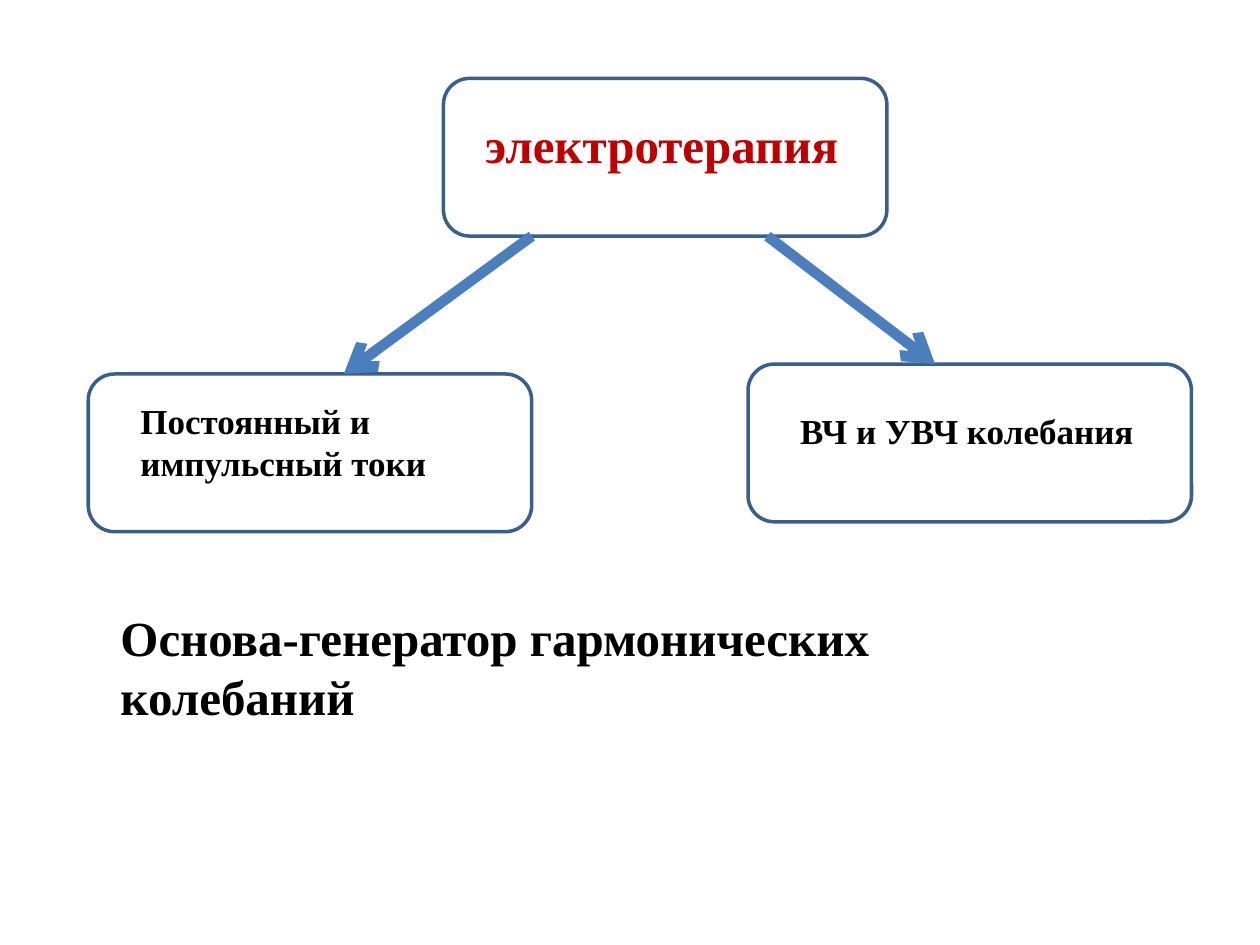
from dataclasses import dataclass

from lxml import etree
from pptx import Presentation
from pptx.dml.color import RGBColor
from pptx.enum import shapes, text
from pptx.oxml.ns import qn
from pptx.util import Cm, Pt


@dataclass(frozen=True)
class Theme:
    font: str = "Times New Roman"
    paper: RGBColor = RGBColor(0xFF, 0xFF, 0xFF)
    ink: RGBColor = RGBColor(0x00, 0x00, 0x00)
    accent: RGBColor = RGBColor(0xC0, 0x00, 0x00)
    outline: RGBColor = RGBColor(0x3A, 0x5F, 0x8C)
    arrow: RGBColor = RGBColor(0x4B, 0x7E, 0xBC)
    large: int = 28
    medium: int = 20
    outline_width: int = 2
    arrow_width: int = 6


BOX_WIDTH, BOX_HEIGHT = 8.94, 3.18


class Diagram:
    """Draws on one slide in one theme; lengths are in centimetres."""

    def __init__(self, slide, theme):
        self.slide = slide
        self.theme = theme

    def box(self, left, top):
        shape = self.slide.shapes.add_shape(
            shapes.MSO_SHAPE.ROUNDED_RECTANGLE,
            Cm(left), Cm(top), Cm(BOX_WIDTH), Cm(BOX_HEIGHT))
        shape.shadow.inherit = False
        shape.fill.solid()
        shape.fill.fore_color.rgb = self.theme.paper
        shape.line.color.rgb = self.theme.outline
        shape.line.width = Pt(self.theme.outline_width)

    def arrow(self, start, end):
        connector = self.slide.shapes.add_connector(
            shapes.MSO_CONNECTOR.STRAIGHT, *map(Cm, start + end))
        connector.line.color.rgb = self.theme.arrow
        connector.line.width = Pt(self.theme.arrow_width)
        properties = connector.element.spPr
        etree.SubElement(properties.find(qn("a:ln")), qn("a:tailEnd"), type="arrow")
        etree.SubElement(properties, qn("a:effectLst"))

    def label(self, wording, left, top, width, height, size, color=None):
        shape = self.slide.shapes.add_textbox(Cm(left), Cm(top), Cm(width), Cm(height))
        frame = shape.text_frame
        frame.text = wording
        frame.word_wrap = True
        frame.auto_size = text.MSO_AUTO_SIZE.SHAPE_TO_FIT_TEXT
        font = frame.paragraphs[0].runs[0].font
        font.name = self.theme.font
        font.size = Pt(size)
        font.bold = True
        font.color.rgb = color or self.theme.ink


def main():
    presentation = Presentation()
    presentation.slide_width, presentation.slide_height = Cm(25.4), Cm(19.05)
    slide = presentation.slides.add_slide(presentation.slide_layouts[6])
    theme = Theme()
    diagram = Diagram(slide, theme)

    root_left, root_top = 8.94, 1.58
    root_bottom = root_top + BOX_HEIGHT
    branches = [  # box left, box top, arrow start x, arrow end x
        (1.78, 7.54, 10.72, 6.93),
        (15.08, 7.34, 15.47, 18.85),
    ]

    diagram.box(root_left, root_top)
    for left, top, start_x, end_x in branches:
        diagram.box(left, top)
        diagram.arrow((start_x, root_bottom), (end_x, top))

    diagram.label("электротерапия", 9.53, 2.18, 8.53, 1.45, theme.large, theme.accent)
    diagram.label("Постоянный и импульсный токи", 2.58, 7.92, 6.35, 1.96, theme.medium)
    diagram.label("ВЧ и УВЧ колебания", 15.88, 8.13, 7.34, 1.12, theme.medium)
    diagram.label("Основа-генератор гармонических колебаний",
                  2.18, 12.12, 17.65, 2.64, theme.large)

    presentation.save("out.pptx")


if __name__ == "__main__":
    main()
